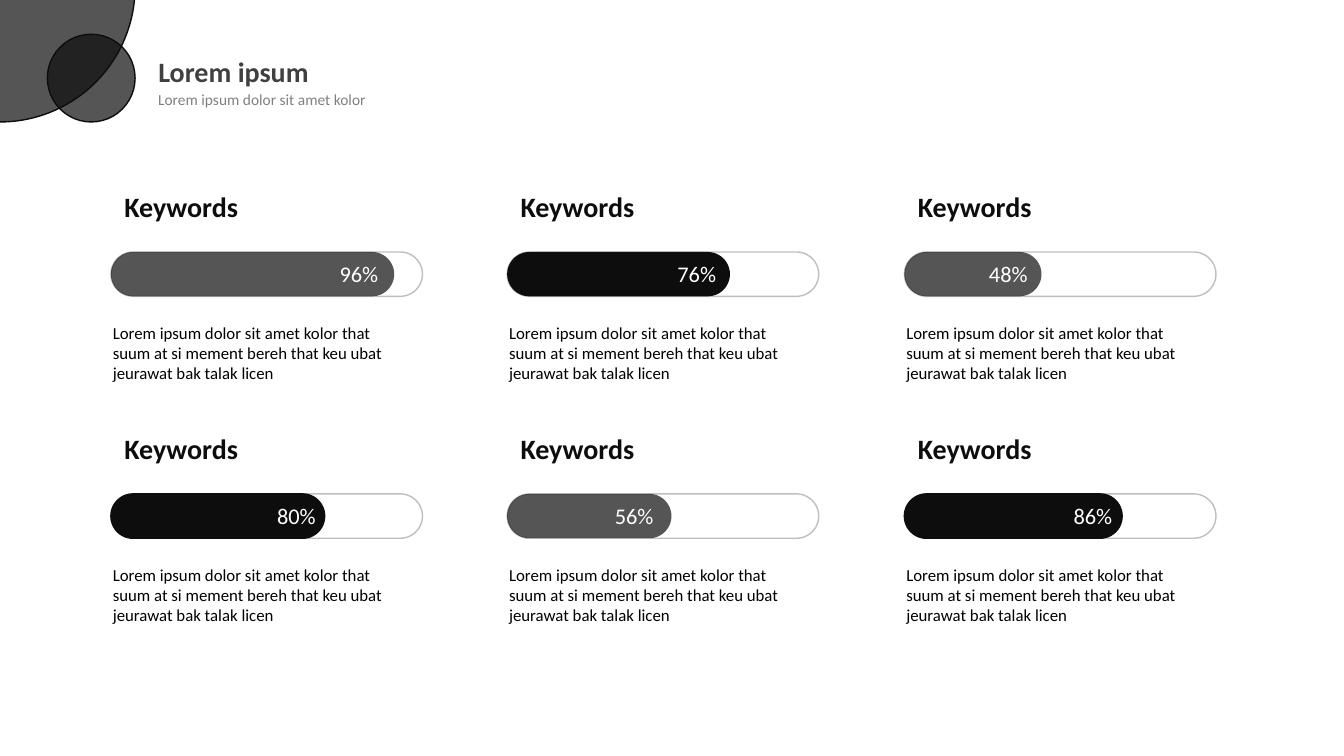
import pptx
import pptx.util
import pptx.dml.color
import pptx.enum.shapes
import pptx.enum.text
import pptx.oxml
import pptx.oxml.ns

RGBColor = pptx.dml.color.RGBColor
MSO_SHAPE = pptx.enum.shapes.MSO_SHAPE
PP_ALIGN = pptx.enum.text.PP_ALIGN
ANCHOR = pptx.enum.text.MSO_ANCHOR
FIT = pptx.enum.text.MSO_AUTO_SIZE

SCALE = 9144
FONT = "Calibri"
INK = RGBColor(0x0D, 0x0D, 0x0D)
BLACK = RGBColor(0, 0, 0)
WHITE = RGBColor(0xFF, 0xFF, 0xFF)
DARK = RGBColor(0x40, 0x40, 0x40)
GREY = RGBColor(0x80, 0x80, 0x80)
RIM = RGBColor(0xBF, 0xBF, 0xBF)

BLURB = ("Lorem ipsum dolor sit amet kolor that suum at si mement "
         "bereh that keu ubat jeurawat bak talak licen")
COLS = 3
BARS = [
    ("96%", 281, 323, True, False),
    ("76%", 221, 658, False, False),
    ("48%", 136, 967, True, False),
    ("80%", 212, 261, False, True),
    ("56%", 163, 596, True, False),
    ("86%", 216, 1051, False, True),
]


def px(*sizes):
    return [size * SCALE for size in sizes]


def style(frame, text, size, color, bold=False, align=PP_ALIGN.LEFT, wrap=False):
    frame.text = text
    frame.word_wrap = wrap
    frame.auto_size = FIT.SHAPE_TO_FIT_TEXT
    frame.vertical_anchor = ANCHOR.TOP
    line = frame.paragraphs[0]
    line.alignment = align
    line.font.name = FONT
    line.font.size = pptx.util.Pt(size)
    line.font.bold = bold
    line.font.color.rgb = color


def add_text(slide, box, *args, **kwargs):
    style(slide.shapes.add_textbox(*px(*box)).text_frame, *args, **kwargs)


def add_form(slide, kind, box, fill=None, rim=None, clear=False):
    form = slide.shapes.add_shape(kind, *px(*box))
    form.shadow.inherit = False
    if fill is None:
        form.fill.background()
    else:
        form.fill.solid()
        form.fill.fore_color.rgb = fill
    if clear:
        tint = form.element.spPr.find(".//" + pptx.oxml.ns.qn("a:srgbClr"))
        tint.append(pptx.oxml.parse_xml(
            f'<a:alpha {pptx.oxml.ns.nsdecls("a")} val="70000"/>'))
    if rim is None:
        form.line.fill.background()
    else:
        form.line.color.rgb = rim
        form.line.width = pptx.util.Pt(1)
    return form


def add_bar(slide, box, **kwargs):
    add_form(slide, MSO_SHAPE.ROUNDED_RECTANGLE, box, **kwargs).adjustments[0] = 0.5


def add_card(slide, left, top, share, width, mark, clear, edged):
    add_bar(slide, (left, top, 309, 44), rim=RIM)
    add_bar(slide, (left, top, width, 44), fill=INK,
            rim=INK if edged else None, clear=clear)
    add_text(slide, (left + 2, top - 67, 134, 44), "Keywords", 20, INK,
             bold=True, align=PP_ALIGN.RIGHT)
    add_text(slide, (left - 8, top + 65, 299, 71), BLURB, 12, BLACK, wrap=True)
    add_text(slide, (mark, top + 3, 62, 37), share, 16, WHITE,
             align=PP_ALIGN.RIGHT)


def add_head(slide):
    for box in ((-134, -147, 268, 268), (47, 34, 87, 87)):
        add_form(slide, MSO_SHAPE.OVAL, box, fill=INK, rim=INK, clear=True)
    title = slide.shapes.title
    title.left, title.top, title.width, title.height = px(147, 49, 186, 44)
    style(title.text_frame, "Lorem ipsum", 20, DARK, bold=True)
    add_text(slide, (147, 84, 240, 29), "Lorem ipsum dolor sit amet kolor", 11, GREY)


def main():
    deck = pptx.Presentation()
    deck.slide_width, deck.slide_height = px(1333, 750)
    slide = deck.slides.add_slide(deck.slide_layouts[5])
    for index, bar in enumerate(BARS):
        row, col = divmod(index, COLS)
        add_card(slide, 110 + col * 787 // 2, 250 + row * 240, *bar)
    add_head(slide)
    deck.save("out.pptx")


if __name__ == "__main__":
    main()
